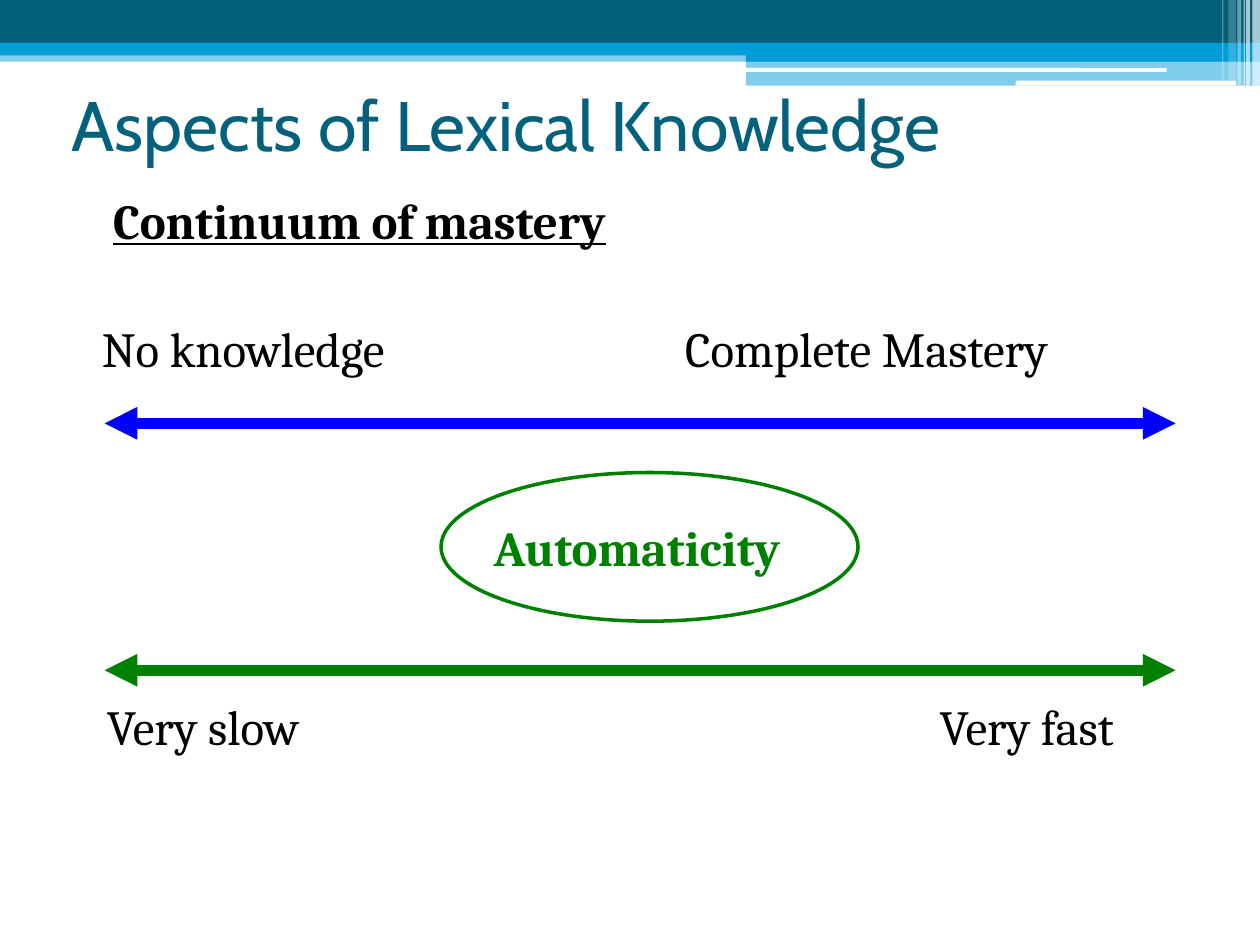
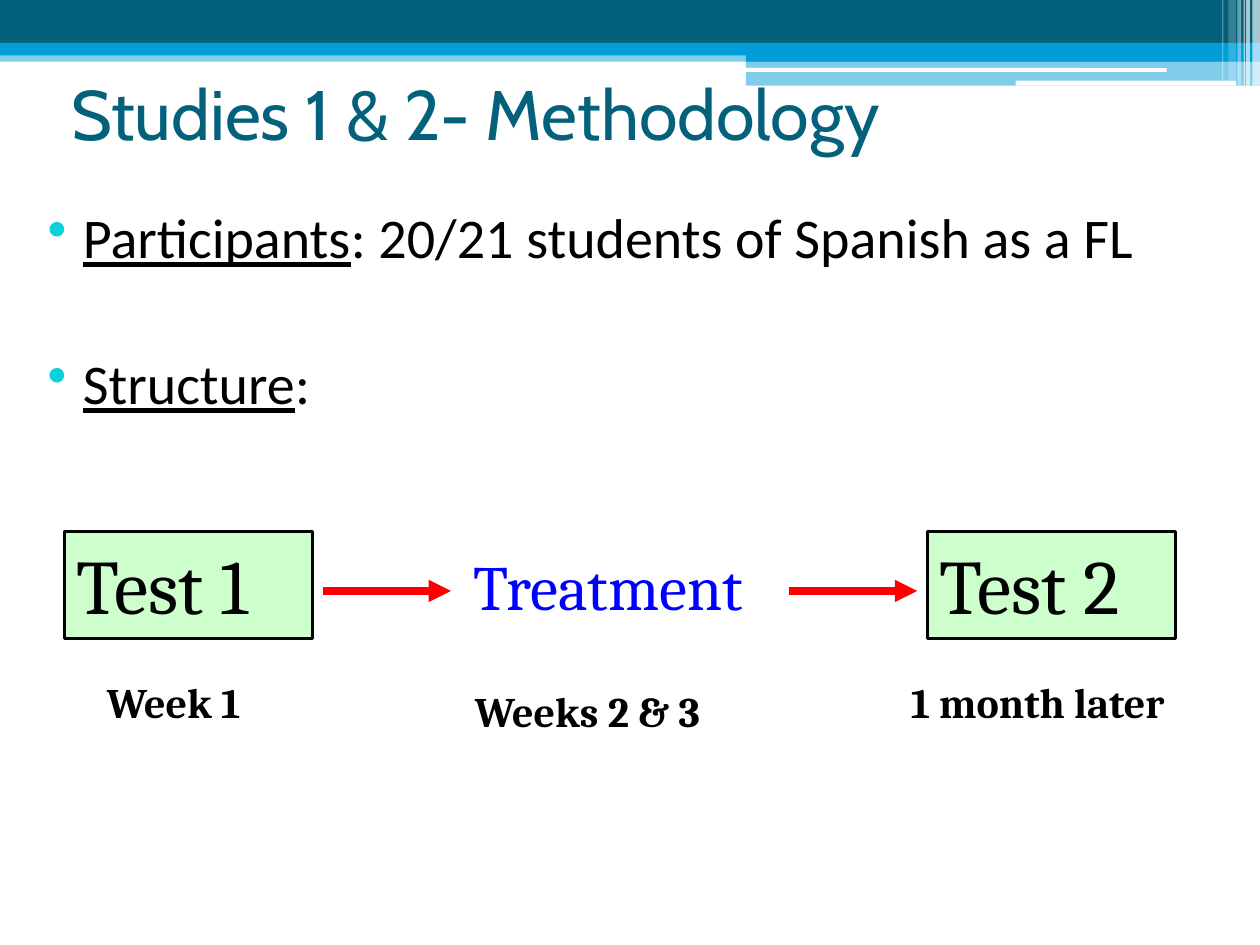
from dataclasses import dataclass, field
from typing import Optional

from lxml import etree
from pptx import Presentation
from pptx.dml.color import RGBColor
from pptx.enum.shapes import MSO_CONNECTOR as Conn, MSO_SHAPE as Geo
from pptx.enum.text import MSO_ANCHOR as Anchor, MSO_AUTO_SIZE as Fit, PP_ALIGN as Align
from pptx.oxml.ns import qn
from pptx.util import Inches, Pt

TEAL = RGBColor(0x04, 0x61, 0x7B)
SKY = RGBColor(0x00, 0x9D, 0xD9)
AQUA = RGBColor(0x0B, 0xD0, 0xD9)
MINT = RGBColor(0xCC, 0xFF, 0xCC)
BLUE = RGBColor(0x00, 0x00, 0xFF)
GREEN = RGBColor(0x00, 0x80, 0x00)
RED = RGBColor(0xFF, 0x00, 0x00)
BLACK = RGBColor(0x00, 0x00, 0x00)
WHITE = RGBColor(0xFF, 0xFF, 0xFF)

# Text formats
TITLE = dict(name="Cabin", size=Pt(40), color=TEAL)
LABEL = dict(name="Cambria", size=Pt(28), color=BLACK)
HEADING = LABEL | dict(bold=True, underline=True)
CONCEPT = LABEL | dict(bold=True, color=GREEN)
TEST = LABEL | dict(size=Pt(44))
TREATMENT = LABEL | dict(size=Pt(36), color=BLUE)
WEEK = LABEL | dict(size=Pt(24), bold=True)
BODY = dict(name="Calibri", size=Pt(32), color=BLACK)


@dataclass
class Band:
    left: float
    top: float
    width: float
    height: float
    color: RGBColor
    opacity: int = 100
    geo: int = Geo.RECTANGLE


@dataclass
class Label:
    text: str
    left: float
    top: float
    width: float
    height: float = 0.57
    fmt: dict = field(default_factory=lambda: LABEL)


@dataclass
class Arrow:
    left: float
    right: float
    y: float
    color: RGBColor
    weight: float
    ends: tuple = ("tailEnd",)


BANDS = [
    Band(0, 0.4, 10, 0.09, SKY, 50),
    Band(0, 0, 10, 0.34, TEAL),
    Band(0, 0.34, 10, 0.1, SKY),
    Band(5.92, 0.39, 4.08, 0.1, SKY),
    Band(5.92, 0.48, 4.08, 0.2, SKY, 50),
    Band(5.91, 0.54, 3.35, 0.03, WHITE, geo=Geo.ROUNDED_RECTANGLE),
    Band(8.06, 0.64, 1.75, 0.04, WHITE, geo=Geo.ROUNDED_RECTANGLE),
    # Vertical stripes in the right corner
    Band(9.94, 0, 0.06, 0.68, WHITE, 65),
    Band(9.89, 0, 0.03, 0.68, WHITE, 65),
    Band(9.87, 0, 0.01, 0.68, WHITE, 60),
    Band(9.82, 0, 0.03, 0.68, WHITE, 40),
    Band(9.75, 0, 0.06, 0.64, WHITE, 20),
    Band(9.7, 0, 0.01, 0.64, WHITE, 30),
]


def add_run(p, text: str, fmt: dict) -> None:
    r = p.add_run()
    r.text = text
    for key, value in fmt.items():
        if key == "color":
            r.font.color.rgb = value
        else:
            setattr(r.font, key, value)


def add_preset(s, geo: int, left: float, top: float, width: float, height: float,
               fill: Optional[RGBColor] = None, line: Optional[RGBColor] = None,
               weight: float = 1):
    sp = s.shapes.add_shape(geo, Inches(left), Inches(top), Inches(width), Inches(height))
    sp.shadow.inherit = False
    if fill is None:
        sp.fill.background()
    else:
        sp.fill.solid()
        sp.fill.fore_color.rgb = fill
    if line is None:
        sp.line.fill.background()
    else:
        sp.line.color.rgb = line
        sp.line.width = Pt(weight)
    return sp


def add_box(s, left: float, top: float, width: float, height: float):
    sp = s.shapes.add_textbox(Inches(left), Inches(top), Inches(width), Inches(height))
    sp.text_frame.word_wrap = True
    return sp


def write_label(sp, text: str, fmt: dict) -> None:
    """One left-aligned line, half a line of space before it."""
    tf = sp.text_frame
    tf.word_wrap, tf.auto_size, tf.vertical_anchor = True, Fit.SHAPE_TO_FIT_TEXT, Anchor.TOP
    p = tf.paragraphs[0]
    p.alignment = Align.LEFT
    before = etree.SubElement(p._p.get_or_add_pPr(), qn("a:spcBef"))
    etree.SubElement(before, qn("a:spcPct"), val="50000")
    add_run(p, text, fmt)


def add_labels(s, labels: list[Label]) -> None:
    for lb in labels:
        write_label(add_box(s, lb.left, lb.top, lb.width, lb.height), lb.text, lb.fmt)


def add_arrow(s, a: Arrow) -> None:
    cn = s.shapes.add_connector(Conn.STRAIGHT, Inches(a.left), Inches(a.y),
                                Inches(a.right), Inches(a.y))
    cn.line.color.rgb = a.color
    cn.line.width = Pt(a.weight)
    for end in a.ends:
        etree.SubElement(cn.line._get_or_add_ln(), qn(f"a:{end}"), type="triangle")
    etree.SubElement(cn._element.spPr, qn("a:effectLst"))


def add_bullet(p, term: str, rest: str, before: float) -> None:
    p.space_before = Pt(before)
    pPr = p._p.get_or_add_pPr()
    pPr.set("marL", str(Inches(0.4)))
    pPr.set("indent", str(Inches(-0.28)))
    color = etree.SubElement(pPr, qn("a:buClr"))
    etree.SubElement(color, qn("a:srgbClr"), val=str(AQUA))
    etree.SubElement(pPr, qn("a:buChar"), char="•")
    add_run(p, term, BODY | dict(underline=True))
    add_run(p, rest, BODY)


def start_slide(prs, title: str, top: float, height: float):
    """Blank slide with the shared bands and title."""
    s = prs.slides.add_slide(prs.slide_layouts[6])
    for b in BANDS:
        sp = add_preset(s, b.geo, b.left, b.top, b.width, b.height, b.color)
        if b.opacity < 100:
            clr = sp.fill._xPr.find(qn("a:solidFill"))[0]
            etree.SubElement(clr, qn("a:alpha"), val=str(b.opacity * 1000))
    tf = add_box(s, 0.47, top, 9, height).text_frame
    tf.vertical_anchor = Anchor.MIDDLE
    add_run(tf.paragraphs[0], title, TITLE)
    return s


def build_continuum(prs) -> None:
    s = start_slide(prs, "Aspects of Lexical Knowledge", 0.23, 1.5)
    add_preset(s, Geo.OVAL, 3.5, 3.75, 3.31, 1.18, line=GREEN, weight=2)
    # Two scales, each with a label at both ends
    for y, color in ((3.36, BLUE), (5.32, GREEN)):
        add_arrow(s, Arrow(0.83, 9.33, y, color, 6.25, ("headEnd", "tailEnd")))
    add_labels(s, [
        Label("Continuum of mastery", 0.8, 1.46, 6, fmt=HEADING),
        Label("No knowledge", 0.71, 2.48, 3.5),
        Label("Complete Mastery", 5.34, 2.48, 4),
        Label("Automaticity", 3.82, 4.06, 2.99, fmt=CONCEPT),
        Label("Very slow", 0.75, 5.48, 2.05),
        Label("Very fast", 7.36, 5.48, 2.05),
    ])


def build_methodology(prs) -> None:
    s = start_slide(prs, "Studies 1 & 2- Methodology", 0.31, 1.17)
    tf = add_box(s, 0.16, 1.56, 9.84, 5.05).text_frame
    add_bullet(tf.paragraphs[0], "Participants", ": 20/21 students of Spanish as a FL", 3)
    add_bullet(tf.add_paragraph(), "Structure", ":", 45)
    # Test, treatment, test
    for text, left in (("Test 1", 0.51), ("Test 2", 7.36)):
        sp = add_preset(s, Geo.RECTANGLE, left, 4.22, 1.97, 0.85, MINT, BLACK, 1.5)
        write_label(sp, text, TEST)
    for left in (2.56, 6.26):
        add_arrow(s, Arrow(left, left + 1.02, 4.69, RED, 4.25))
    add_labels(s, [
        Label("Treatment", 3.66, 4.3, 2.74, 0.7, TREATMENT),
        Label("Week 1", 0.75, 5.32, 1.58, 0.5, WEEK),
        Label("Weeks 2 & 3", 3.67, 5.39, 2.51, 0.5, WEEK),
        Label("1 month later", 7.13, 5.32, 2.68, 0.5, WEEK),
    ])


def main() -> None:
    prs = Presentation()
    prs.slide_width, prs.slide_height = Inches(10), Inches(7.5)
    build_continuum(prs)
    build_methodology(prs)
    prs.save("out.pptx")


if __name__ == "__main__":
    main()
